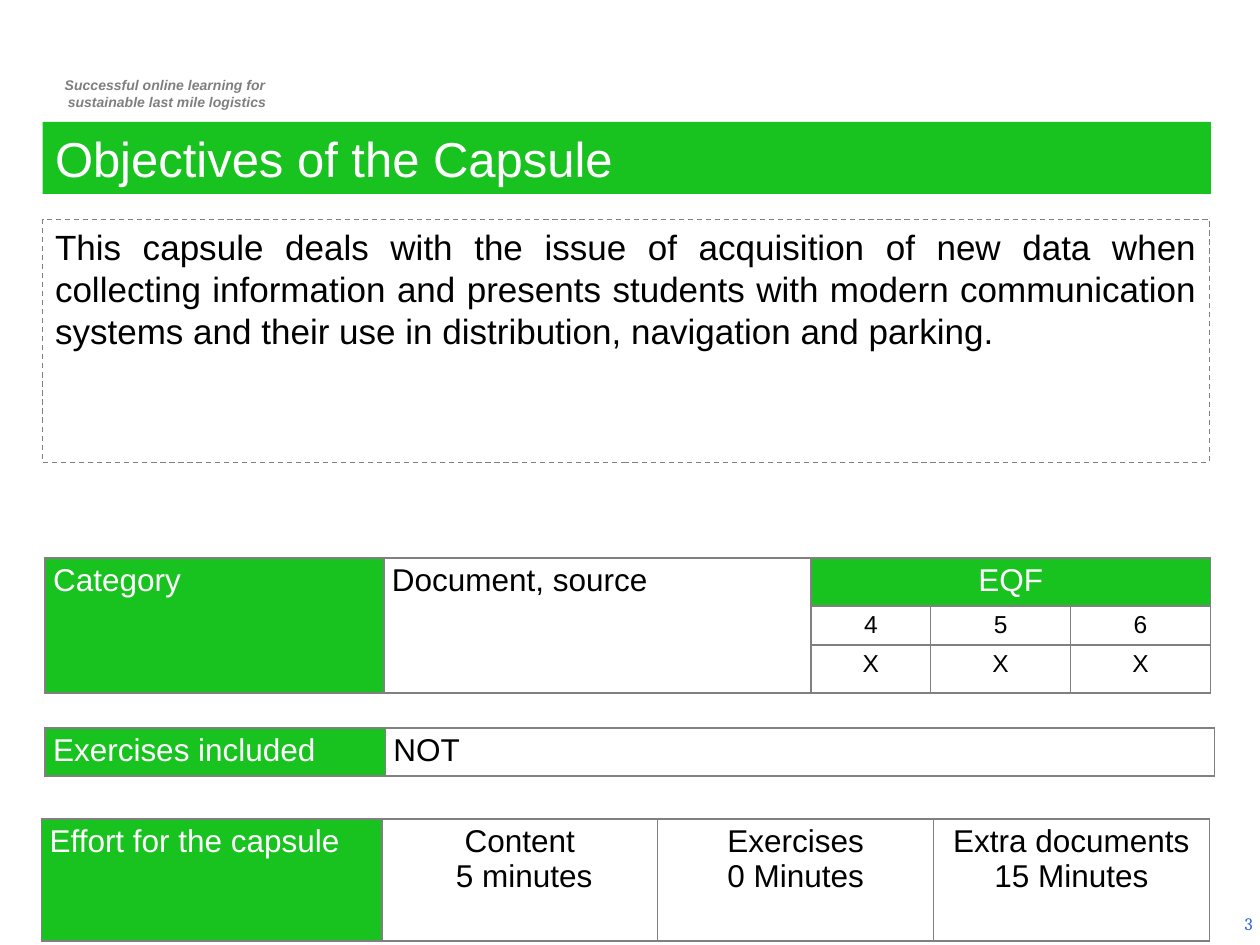
from dataclasses import dataclass

from lxml.etree import SubElement
from pptx import Presentation
from pptx.dml.color import RGBColor
from pptx.enum.dml import MSO_LINE
from pptx.enum.shapes import MSO_SHAPE
from pptx.enum.text import MSO_ANCHOR, PP_ALIGN as Align
from pptx.oxml.ns import qn
from pptx.util import Cm, Pt

COLORS = {
    "green": "18C320",
    "gray": "808080",
    "muted": "7F7F7F",
    "blue": "3366CC",
    "white": "FFFFFF",
    "black": "000000",
}


@dataclass
class Box:
    left: float
    top: float
    width: float
    height: float


@dataclass
class Style:
    size: float
    color: str = "black"
    align: Align = Align.LEFT
    font: str = "Arial"
    emphasis: bool = False


@dataclass
class Cell:
    row: int
    col: int
    lines: list[str]
    style: Style
    filled: bool = False
    rows: int = 1
    cols: int = 1


@dataclass
class Grid:
    left: float
    top: float
    widths: list[float]
    heights: list[float]
    cells: list[Cell]


LABEL = Style(18, "white", Align.JUSTIFY)
VALUE = Style(18, align=Align.JUSTIFY)
CENTERED = Style(18, align=Align.CENTER)
LEVEL = Style(14, align=Align.CENTER)


def rgb(name: str) -> RGBColor:
    return RGBColor.from_string(COLORS[name])


def write(tf, lines: list[str], style: Style) -> None:
    for i, line in enumerate(lines):
        p = tf.paragraphs[0] if i == 0 else tf.add_paragraph()
        p.alignment = style.align
        r = p.add_run()
        r.text = line
        r.font.size = Pt(style.size)
        r.font.name = style.font
        r.font.bold = r.font.italic = style.emphasis
        r.font.color.rgb = rgb(style.color)


def add_text(s, box: Box, lines: list[str], style: Style):
    sp = s.shapes.add_textbox(Cm(box.left), Cm(box.top), Cm(box.width), Cm(box.height))
    sp.text_frame.word_wrap = True
    write(sp.text_frame, lines, style)
    return sp


def add_panel(s, box: Box, text: str, style: Style):
    sp = s.shapes.add_shape(
        MSO_SHAPE.RECTANGLE, Cm(box.left), Cm(box.top), Cm(box.width), Cm(box.height)
    )
    sp.shadow.inherit = False
    sp.fill.background()
    sp.line.fill.background()
    tf = sp.text_frame
    tf.word_wrap = True
    tf.vertical_anchor = MSO_ANCHOR.TOP
    write(tf, [text], style)
    return sp


def set_borders(cell) -> None:
    pr = cell._tc.get_or_add_tcPr()
    for i, tag in enumerate(("a:lnL", "a:lnR", "a:lnT", "a:lnB")):
        ln = pr.makeelement(qn(tag), {"w": str(Pt(1))})
        fill = SubElement(ln, qn("a:solidFill"))
        SubElement(fill, qn("a:srgbClr"), {"val": COLORS["gray"]})
        pr.insert(i, ln)


def add_grid(s, grid: Grid) -> None:
    table = s.shapes.add_table(
        len(grid.heights), len(grid.widths), Cm(grid.left), Cm(grid.top),
        Cm(sum(grid.widths)), Cm(sum(grid.heights)),
    ).table
    table.first_row = table.horz_banding = False
    for column, width in zip(table.columns, grid.widths):
        column.width = Cm(width)
    for row, height in zip(table.rows, grid.heights):
        row.height = Cm(height)
    for cell in table.iter_cells():
        cell.fill.background()
        cell.margin_left = cell.margin_right = Cm(0.16)
        cell.margin_top = cell.margin_bottom = Cm(0.1)
        set_borders(cell)
    for item in grid.cells:
        cell = table.cell(item.row, item.col)
        if item.rows * item.cols > 1:
            cell.merge(table.cell(item.row + item.rows - 1, item.col + item.cols - 1))
        if item.filled:
            cell.fill.solid()
            cell.fill.fore_color.rgb = rgb("green")
        write(cell.text_frame, item.lines, item.style)


def main() -> None:
    prs = Presentation()
    prs.slide_width, prs.slide_height = Cm(25.4), Cm(19.05)
    s = prs.slides.add_slide(prs.slide_layouts[6])

    sp = add_text(
        s, Box(0.74, 1.42, 5.16, 0.94),
        ["Successful online learning for ", "sustainable last mile logistics"],
        Style(8, "muted", Align.CENTER, emphasis=True),
    )
    sp.text_frame.margin_left = Cm(0.35)
    sp = add_text(
        s, Box(19.58, 18.11, 5.82, 1.02), ["3"], Style(10, "blue", Align.RIGHT, "Cambria")
    )
    sp.text_frame.vertical_anchor = MSO_ANCHOR.MIDDLE
    sp.text_frame.margin_right = Cm(0.15)

    title = add_panel(
        s, Box(0.86, 2.46, 23.55, 1.45), "Objectives of the Capsule", Style(28, "white")
    )
    title.fill.solid()
    title.fill.fore_color.rgb = rgb("green")

    summary = add_panel(
        s, Box(0.86, 4.42, 23.52, 4.9),
        "This capsule deals with the issue of acquisition of new data when collecting "
        "information and presents students with modern communication systems and their "
        "use in distribution, navigation and parking.",
        Style(20, align=Align.JUSTIFY),
    )
    summary.line.color.rgb = rgb("gray")
    summary.line.width = Pt(0.75)
    summary.line.dash_style = MSO_LINE.DASH

    levels = [
        Cell(row, col, [text], LEVEL)
        for row, texts in enumerate(("456", "XXX"), 1)
        for col, text in enumerate(texts, 2)
    ]
    add_grid(s, Grid(0.91, 11.25, [6.83, 8.61, 2.41, 2.82, 2.82], [0.94, 0.79, 0.94], [
        Cell(0, 0, ["Category"], LABEL, True, rows=3),
        Cell(0, 1, ["Document, source"], VALUE, rows=3),
        Cell(0, 2, ["EQF"], Style(18, "white", Align.CENTER), True, cols=3),
        *levels,
    ]))
    add_grid(s, Grid(0.91, 14.68, [6.86, 16.71], [0.95], [
        Cell(0, 0, ["Exercises included"], LABEL, True),
        Cell(0, 1, ["NOT"], VALUE),
    ]))
    add_grid(s, Grid(0.84, 16.51, [6.86] + [5.56] * 3, [2.46], [
        Cell(0, 0, ["Effort for the capsule"], LABEL, True),
        Cell(0, 1, ["Content", "\N{NO-BREAK SPACE}5 minutes"], CENTERED),
        Cell(0, 2, ["Exercises", "0 Minutes"], CENTERED),
        Cell(0, 3, ["Extra documents", "15 Minutes"], CENTERED),
    ]))
    prs.save("out.pptx")


if __name__ == "__main__":
    main()
